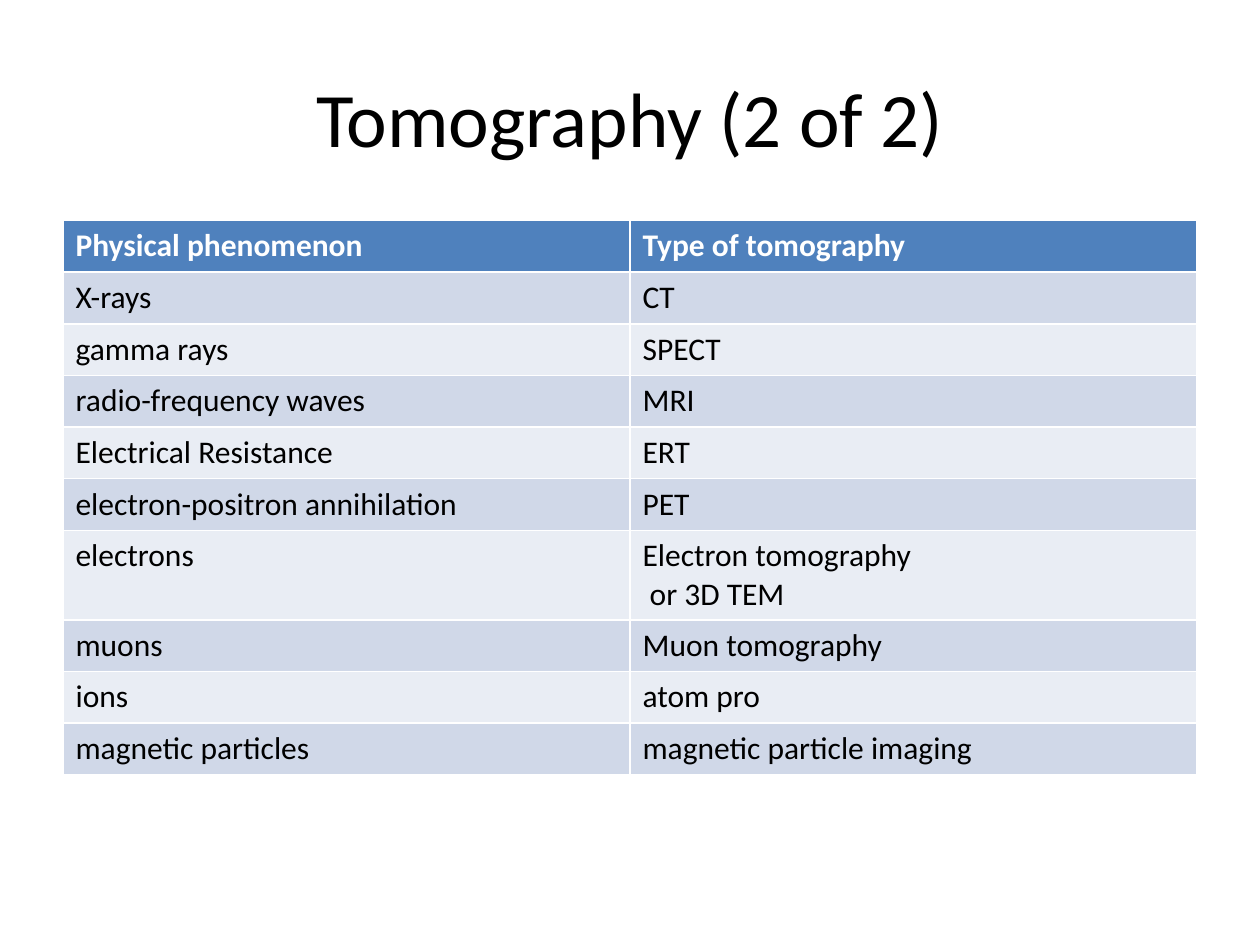
from pptx import Presentation
from pptx.dml.color import RGBColor
from pptx.enum import text
from pptx.util import Inches, Pt

COLORS = {
    "header": "4F81BD",
    "odd_row": "D0D8E8",
    "even_row": "E9EDF4",
    "header_text": "FFFFFF",
    "text": "000000",
}
FONT = "Calibri"
ROW_HEIGHT = 0.41

TOMOGRAPHY_TYPES = [
    ("Physical phenomenon", "Type of tomography"),
    ("X-rays", "CT"),
    ("gamma rays", "SPECT"),
    ("radio-frequency waves", "MRI"),
    ("Electrical Resistance", "ERT"),
    ("electron-positron annihilation", "PET"),
    ("electrons", "Electron tomography\n or 3D TEM"),
    ("muons", "Muon tomography"),
    ("ions", "atom pro"),
    ("magnetic particles", "magnetic particle imaging"),
]


def color(name):
    return RGBColor.from_string(COLORS[name])


def format_text(frame, color_name, **font_format):
    for para in frame.paragraphs:
        for span in para.runs:
            span.font.color.rgb = color(color_name)
            for name, value in font_format.items():
                setattr(span.font, name, value)


def place_title(page, box, wording):
    title = page.shapes.title
    for name, value in zip(("left", "top", "width", "height"), box):
        setattr(title, name, Inches(value))
    frame = title.text_frame
    frame.text = wording
    frame.vertical_anchor = text.MSO_ANCHOR.MIDDLE
    frame.paragraphs[0].alignment = text.PP_ALIGN.CENTER
    format_text(frame, "text", name=FONT, size=Pt(44))


def add_tomography_table(page, box, rows):
    """Add a header row and banded rows; the table style draws the white rules."""
    left, top, width = map(Inches, box)
    height = Inches(ROW_HEIGHT * len(rows))
    table = page.shapes.add_table(len(rows), len(rows[0]), left, top, width, height).table
    for i, row in enumerate(rows):
        table.rows[i].height = Inches(ROW_HEIGHT)
        is_header = i == 0
        fill = "header" if is_header else "odd_row" if i % 2 else "even_row"
        for j, wording in enumerate(row):
            cell = table.cell(i, j)
            cell.text = wording
            cell.fill.solid()
            cell.fill.fore_color.rgb = color(fill)
            format_text(cell.text_frame, "header_text" if is_header else "text",
                        name=FONT, size=Pt(18), bold=is_header)


def main():
    deck = Presentation()
    deck.slide_width, deck.slide_height = Inches(10), Inches(7.5)
    page = deck.slides.add_slide(deck.slide_layouts.get_by_name("Title Only"))
    place_title(page, (0.5, 0.3, 9, 1.25), "Tomography (2 of 2)")
    add_tomography_table(page, (0.5, 1.75, 9), TOMOGRAPHY_TYPES)
    deck.save("out.pptx")


if __name__ == "__main__":
    main()
